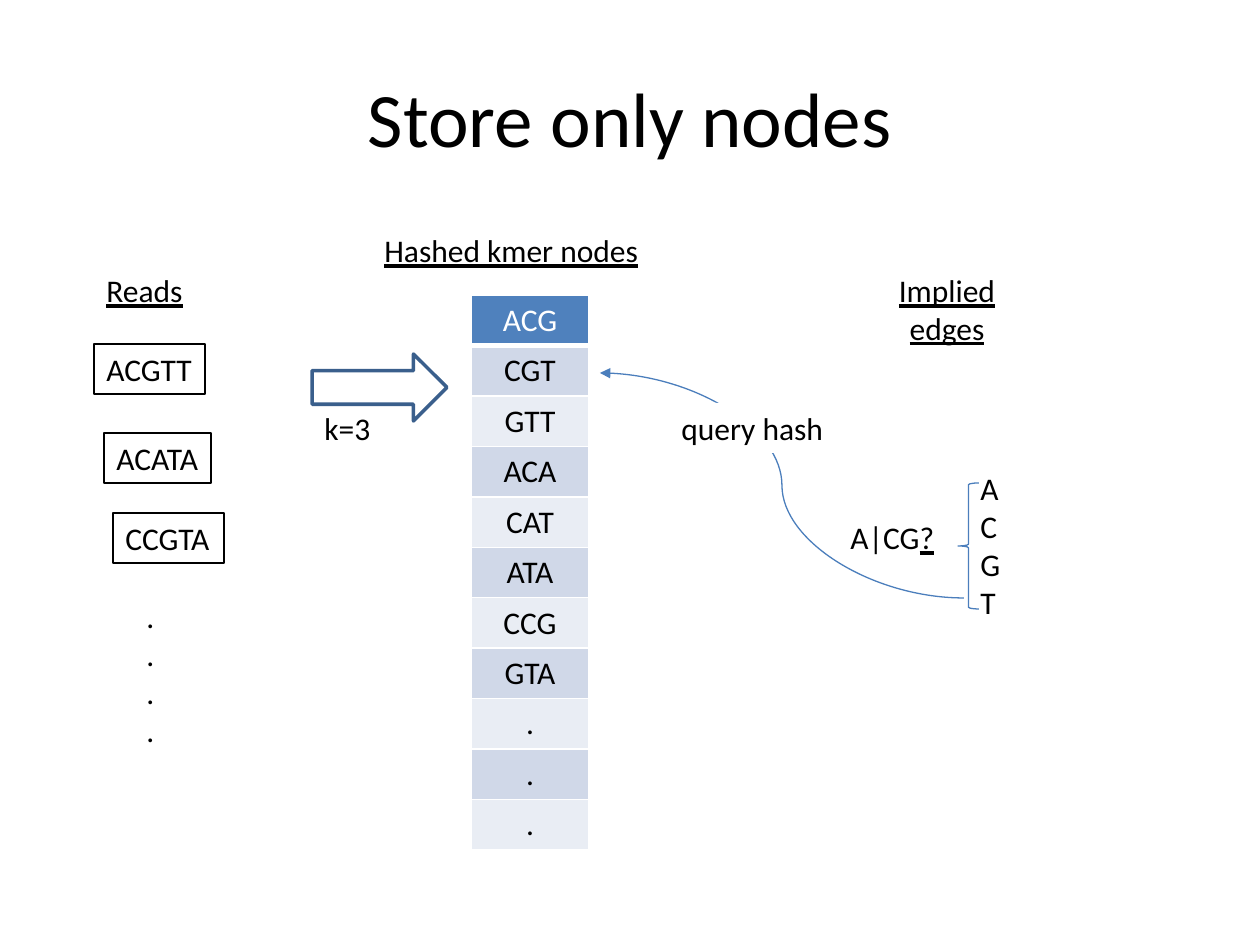
from lxml import etree
from pptx import Presentation
from pptx import util as u
from pptx.dml import color
from pptx.enum import shapes, text
from pptx.oxml import ns

PX = 914400 / 126
BLACK, WHITE = "000000", "FFFFFF"
HEADER, BAND_DARK, BAND_LIGHT = "4F81BD", "D0D8E8", "E9EDF4"
EDGE, ARROW = "4B7EBC", "3A5F8C"


def emu(*lengths):
    """Turn px lengths into EMU."""
    return [u.Emu(round(length * PX)) for length in lengths]


def rgb(hex_string):
    return color.RGBColor.from_string(hex_string)


def write(frame, lines, size=18, ink=BLACK, align=text.PP_ALIGN.LEFT,
          underline=False, anchor=text.MSO_ANCHOR.TOP, wrap=False):
    """Fill a text frame; each line is a string or a list of (string, underline)."""
    frame.word_wrap = wrap
    frame.vertical_anchor = anchor
    for index, line in enumerate(lines):
        paragraph = frame.paragraphs[0] if index == 0 else frame.add_paragraph()
        paragraph.alignment = align
        for words, underlined in [(line, underline)] if isinstance(line, str) else line:
            run = paragraph.add_run()
            run.text = words
            run.font.name, run.font.size = "Calibri", u.Pt(size)
            run.font.color.rgb = rgb(ink)
            run.font.underline = underlined or None


def label(slide, box, *lines, **style):
    write(slide.shapes.add_textbox(*emu(*box)).text_frame, lines, **style)


def block(slide, preset, box, fill=None, line=None, weight=0.75):
    """Add a preset shape without shadow."""
    shape = slide.shapes.add_shape(preset, *emu(*box))
    shape.shadow.inherit = False
    if fill:
        shape.fill.solid()
        shape.fill.fore_color.rgb = rgb(fill)
    else:
        shape.fill.background()
    if line:
        shape.line.color.rgb, shape.line.width = rgb(line), u.Pt(weight)
    else:
        shape.line.fill.background()
    return shape


def cell_borders(cell, bottom):
    for side in ("lnL", "lnR", "lnT", "lnB"):
        weight = bottom if side == "lnB" else 1
        line = etree.SubElement(cell._tc.get_or_add_tcPr(), ns.qn(f"a:{side}"),
                                w=str(u.Pt(weight)))
        solid = etree.SubElement(line, ns.qn("a:solidFill"))
        etree.SubElement(solid, ns.qn("a:srgbClr"), val=WHITE)


def reads(slide, left, top):
    label(slide, (left, top, 102, 50), "Reads", underline=True)
    for sequence, dx, dy, width in (("ACGTT", 0, 79, 111), ("ACATA", 10, 168, 107),
                                    ("CCGTA", 19, 248, 111)):
        read = block(slide, shapes.MSO_SHAPE.RECTANGLE,
                     (left + dx, top + dy, width, 50), line=BLACK)
        write(read.text_frame, [sequence])
    label(slide, (left + 40, top + 326, 34, 165), *"....")


def kmer_step(slide, left, top):
    block(slide, shapes.MSO_SHAPE.RIGHT_ARROW, (left, top, 135, 67),
          line=ARROW, weight=2)
    label(slide, (left, top + 49, 72, 50), "k=3")


def hash_table(slide, left, top):
    label(slide, (left, top, 290, 50), "Hashed kmer nodes", underline=True)
    kmers = "ACG CGT GTT ACA CAT ATA CCG GTA . . .".split()
    table = slide.shapes.add_table(
        len(kmers), 1, *emu(left + 99, top + 70, 118, 554)).table
    for row, kmer in enumerate(kmers):
        cell = table.cell(row, 0)
        header = row == 0
        write(cell.text_frame, [kmer], ink=WHITE if header else BLACK,
              align=text.PP_ALIGN.CENTER, wrap=True)
        cell_borders(cell, bottom=3 if header else 1)
        cell.fill.solid()
        cell.fill.fore_color.rgb = rgb(
            HEADER if header else BAND_DARK if row % 2 else BAND_LIGHT)


def query(slide, left, top):
    """Draw the curve from the implied edges back to the hash table."""
    curve = slide.shapes.add_connector(
        shapes.MSO_CONNECTOR.CURVE, *emu(left, top, left + 364, top + 225))
    curve.line.color.rgb, curve.line.width = rgb(EDGE), u.Pt(0.75)
    etree.SubElement(curve.line._get_or_add_ln(), ns.qn("a:headEnd"), type="triangle")
    etree.SubElement(curve._element.spPr, ns.qn("a:effectLst"))
    caption = block(slide, shapes.MSO_SHAPE.RECTANGLE,
                    (left + 69, top + 30, 169, 50), fill=WHITE)
    write(caption.text_frame, ["query hash"])


def implied_edges(slide, left, top):
    label(slide, (left + 10, top, 198, 89), "Implied edges", underline=True,
          align=text.PP_ALIGN.CENTER, wrap=True)
    label(slide, (left, top + 247, 110, 50), [("A|CG", False), ("?", True)])
    label(slide, (left + 130, top + 198, 45, 165), *"ACGT")
    block(slide, shapes.MSO_SHAPE.LEFT_BRACE, (left + 120, top + 218, 21, 126), line=EDGE)


def main():
    deck = Presentation()
    deck.slide_width, deck.slide_height = emu(1260, 945)
    slide = deck.slides.add_slide(deck.slide_layouts[6])
    label(slide, (63, 38, 1134, 157), "Store only nodes", size=44, wrap=True,
          align=text.PP_ALIGN.CENTER, anchor=text.MSO_ANCHOR.MIDDLE)
    reads(slide, 94, 265)
    hash_table(slide, 372, 225)
    kmer_step(slide, 312, 354)
    query(slide, 600, 373)
    implied_edges(slide, 838, 265)
    deck.save("out.pptx")


if __name__ == "__main__":
    main()
